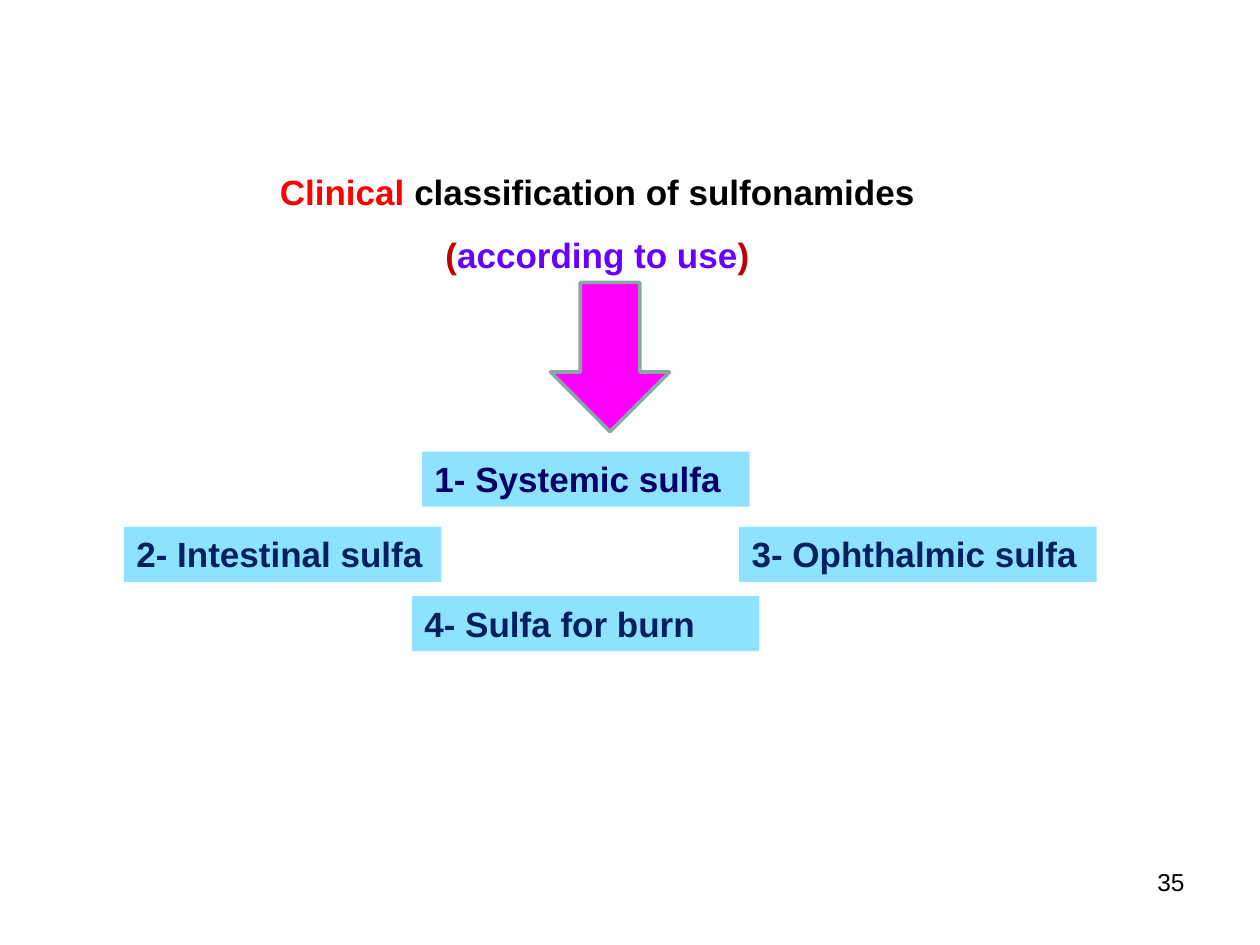
from dataclasses import dataclass
from typing import Any

from pptx import Presentation
from pptx import util as u
from pptx.dml.color import RGBColor
from pptx.enum import shapes, text

BLACK = RGBColor(0x00, 0x00, 0x00)
WHITE = RGBColor(0xFF, 0xFF, 0xFF)
RED = RGBColor(0xFF, 0x00, 0x00)
DARK_RED = RGBColor(0xC0, 0x00, 0x00)
VIOLET = RGBColor(0x66, 0x00, 0xFF)
INDIGO = RGBColor(0x00, 0x00, 0x66)
NAVY = RGBColor(0x00, 0x20, 0x60)
SKY = RGBColor(0x8F, 0xE2, 0xFF)
MAGENTA = RGBColor(0xFF, 0x00, 0xFF)
GREY = RGBColor(0x8A, 0xA6, 0xA8)


@dataclass
class SlideBuilder:
    page: Any
    font: str = "Arial"
    size: float = 20
    label_height: float = 31.5

    def fill_para(self, para, spans, size, bold, align):
        para.alignment = align
        para.font.name = self.font
        para.font.size = u.Pt(size)
        para.font.bold = bold
        for words, color in spans:
            span = para.add_run()
            span.text = words
            span.font.color.rgb = color

    def text_box(self, bounds, lines, fill=None, size=None, bold=True,
                 align=text.PP_ALIGN.LEFT, spacing=None):
        box = self.page.shapes.add_textbox(*map(u.Pt, bounds))
        if fill is not None:
            box.fill.solid()
            box.fill.fore_color.rgb = fill
        frame = box.text_frame
        frame.word_wrap = True
        for index, spans in enumerate(lines):
            para = frame.add_paragraph() if index else frame.paragraphs[0]
            self.fill_para(para, spans, size or self.size, bold, align)
            if spacing:
                para.line_spacing = spacing

    def label(self, left, top, width, words, color=NAVY):
        bounds = (left, top, width, self.label_height)
        self.text_box(bounds, [[(words, color)]], fill=SKY)

    def down_arrow(self, bounds, fill, outline):
        arrow = self.page.shapes.add_shape(
            shapes.MSO_SHAPE.DOWN_ARROW, *map(u.Pt, bounds))
        arrow.shadow.inherit = False
        arrow.fill.solid()
        arrow.fill.fore_color.rgb = fill
        arrow.line.color.rgb = outline
        arrow.line.width = u.Pt(2)


def main():
    deck = Presentation()
    deck.slide_width, deck.slide_height = u.Pt(720), u.Pt(540)
    builder = SlideBuilder(deck.slides.add_slide(deck.slide_layouts[6]))

    builder.label(241.2, 258, 187.2, "1- Systemic sulfa", INDIGO)
    builder.label(70.8, 301, 181.4, "2- Intestinal sulfa")
    builder.label(235.4, 340.6, 198.5, "4- Sulfa for burn")
    builder.label(422.4, 301, 204.3, "3- Ophthalmic sulfa")

    title = [
        [("Clinical ", RED), ("classification of sulfonamides ", BLACK)],
        [("(", DARK_RED), ("according to use", VIOLET), (")", DARK_RED)],
    ]
    builder.text_box((150.2, 82, 382.4, 80), title, fill=WHITE,
                     align=text.PP_ALIGN.CENTER, spacing=1.5)
    builder.down_arrow((314.6, 161.4, 68, 85.2), MAGENTA, GREY)
    builder.text_box((516, 492, 168, 37.5), [[("35", BLACK)]], size=14,
                     bold=False, align=text.PP_ALIGN.RIGHT)
    deck.save("out.pptx")


if __name__ == "__main__":
    main()
